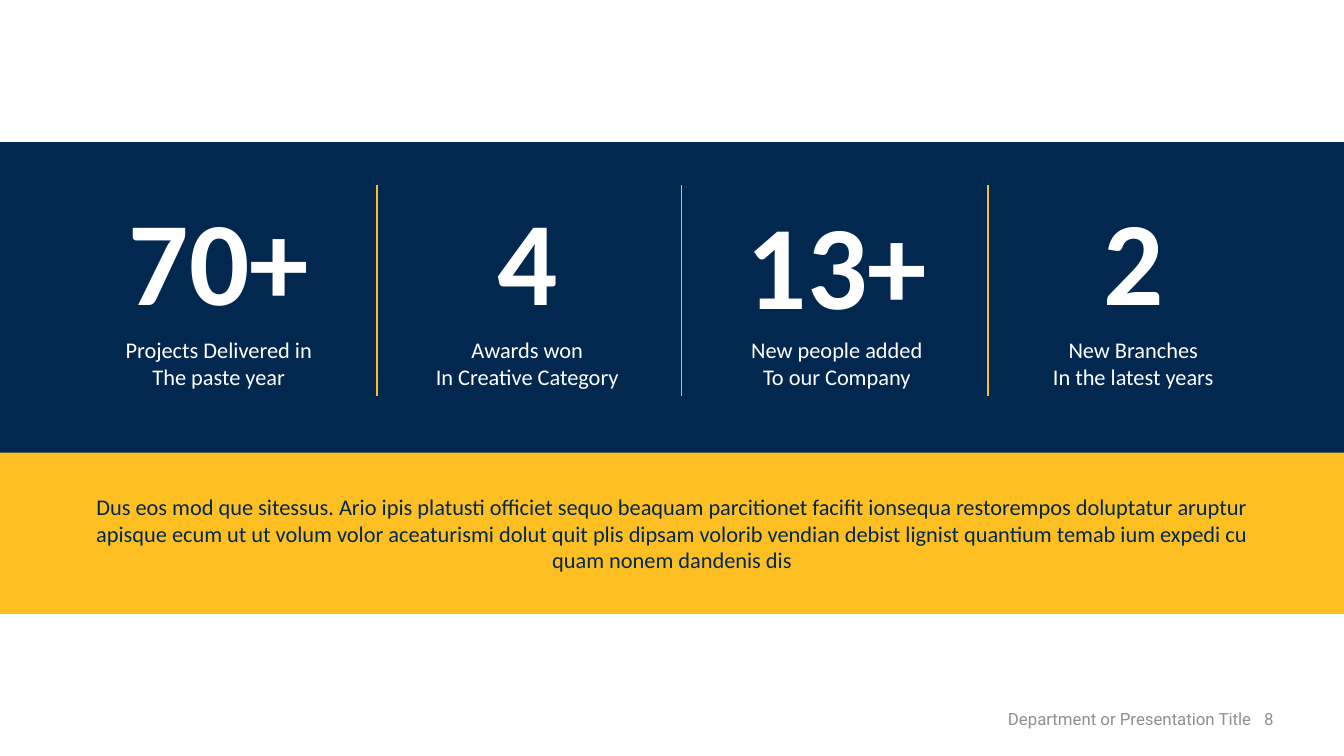
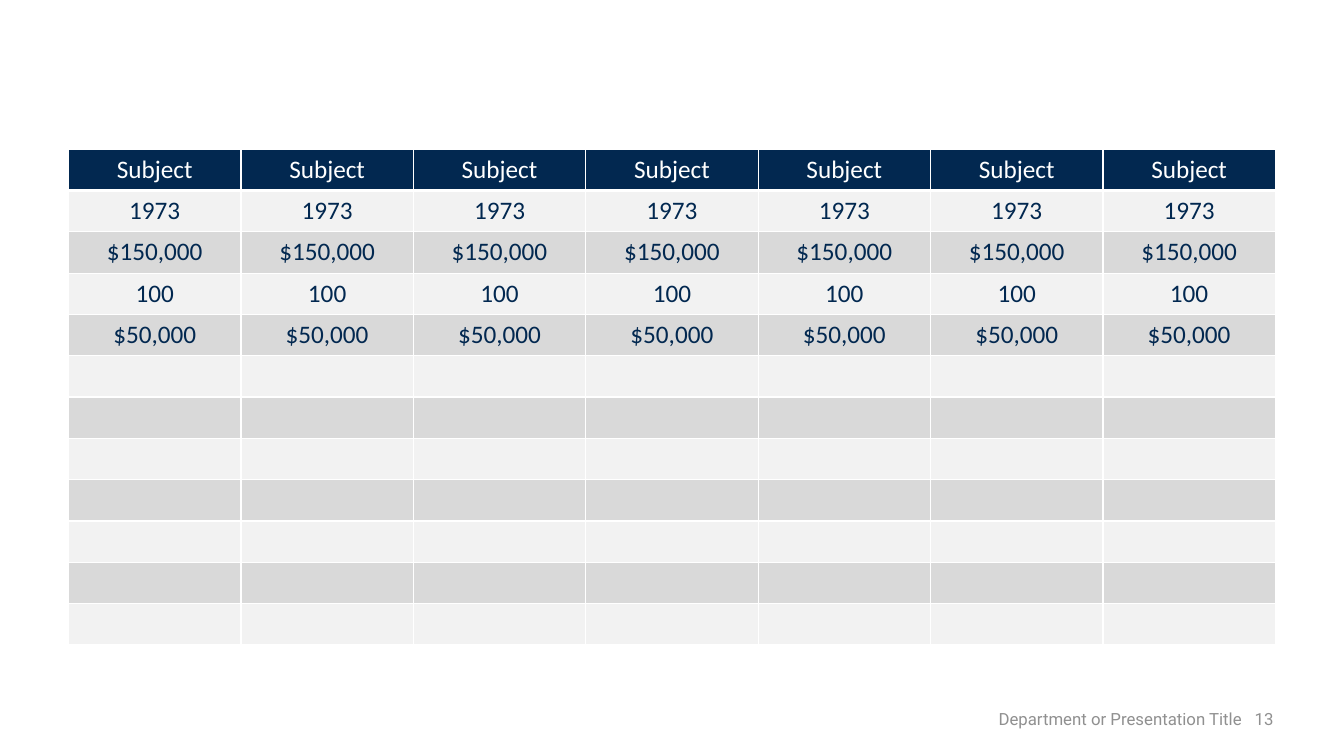
from pptx import Presentation
from pptx.dml.color import RGBColor
from pptx.enum.shapes import MSO_CONNECTOR as Connector, MSO_SHAPE as Shape
from pptx.enum.text import MSO_ANCHOR as Anchor, PP_ALIGN as Align
from pptx.oxml.ns import qn
from pptx.util import Inches, Pt
from lxml.etree import SubElement

NAVY = RGBColor(0x02, 0x28, 0x50)
GOLD = RGBColor(0xFE, 0xBF, 0x23)
WHITE = RGBColor(0xFF, 0xFF, 0xFF)
LIGHT = RGBColor(0xF2, 0xF2, 0xF2)
MEDIUM = RGBColor(0xD9, 0xD9, 0xD9)
GRAY = RGBColor(0x90, 0x90, 0x90)

WIDTH, HEIGHT = 13.33, 7.5
BODY_FONT, FOOTER_FONT = "Calibri", "Roboto"
FOOTER = "Department or Presentation Title"


def write(frame, text, size=16, color=NAVY, font=BODY_FONT, bold=False,
          align=Align.CENTER):
    """Fill a text frame, one paragraph for each line of text."""
    for index, line in enumerate(text.split("\n")):
        para = frame.paragraphs[0] if index == 0 else frame.add_paragraph()
        para.alignment = align
        para.font.size = Pt(size)
        if line:
            span = para.add_run()
            span.text = line
            style(span, size, color, font, bold)


def style(span, size, color, font, bold=False):
    span.font.size = Pt(size)
    span.font.name = font
    span.font.bold = bold
    span.font.color.rgb = color


class Builder:
    def __init__(self):
        self.deck = Presentation()
        self.deck.slide_width = Inches(WIDTH)
        self.deck.slide_height = Inches(HEIGHT)
        self.page = None

    def new_page(self, number):
        self.page = self.deck.slides.add_slide(self.deck.slide_layouts[6])
        frame = self.text_box(7.61, 6.95, 5.12, 0.33)
        frame.vertical_anchor = Anchor.BOTTOM
        para = frame.paragraphs[0]
        para.alignment = Align.RIGHT
        para.line_spacing = 0.9
        for text in (FOOTER, " ", str(number)):
            span = para.add_run()
            span.text = text
            style(span, 12, GRAY, FOOTER_FONT)
            if text == " ":  # widen the gap before the page number
                span.font._element.set("spc", "600")

    def text_box(self, left, top, width, height, side=0.1, wrap=True):
        box = self.page.shapes.add_textbox(
            Inches(left), Inches(top), Inches(width), Inches(height))
        frame = box.text_frame
        frame.word_wrap = wrap
        frame.margin_left = frame.margin_right = Inches(side)
        return frame

    def band(self, top, height, color):
        box = self.page.shapes.add_shape(
            Shape.RECTANGLE, 0, Inches(top), Inches(WIDTH), Inches(height))
        box.shadow.inherit = False
        box.fill.solid()
        box.fill.fore_color.rgb = color
        box.line.fill.background()

    def divider(self, x, top, bottom):
        line = self.page.shapes.add_connector(
            Connector.STRAIGHT, Inches(x), Inches(top), Inches(x), Inches(bottom))
        line.line.color.rgb = GOLD
        line.line.width = Pt(1)
        SubElement(line._element.spPr, qn("a:effectLst"))

    def statistic(self, center, top, figure, caption):
        width = 2.8
        left = center - width / 2
        write(self.text_box(left, top, width, 1.53, side=0.03, wrap=False),
              figure, size=85, color=WHITE, bold=True)
        write(self.text_box(left, 3.29, width, 0.64, side=0.03),
              caption, color=WHITE)

    def table(self, left, top, column_width, row_height, columns, rows):
        table = self.page.shapes.add_table(
            len(rows), columns, Inches(left), Inches(top),
            Inches(column_width * columns), Inches(row_height * len(rows))).table
        for column in table.columns:
            column.width = Inches(column_width)
        for index, text in enumerate(rows):
            table.rows[index].height = Inches(row_height)
            header = index == 0
            fill = NAVY if header else LIGHT if index % 2 else MEDIUM
            for cell in table.rows[index].cells:
                self.borders(cell, bottom=3 if header else 1)
                cell.fill.solid()
                cell.fill.fore_color.rgb = fill
                write(cell.text_frame, text, size=18,
                      color=WHITE if header else NAVY)

    def borders(self, cell, bottom):
        properties = cell._tc.get_or_add_tcPr()
        for side, points in (("L", 1), ("R", 1), ("T", 1), ("B", bottom)):
            edge = SubElement(properties, qn("a:ln" + side), w=str(Pt(points)))
            fill = SubElement(edge, qn("a:solidFill"))
            SubElement(fill, qn("a:srgbClr"), val=str(WHITE))


def statistics_page(builder):
    builder.new_page(8)
    builder.band(4.48, 1.61, GOLD)
    builder.band(1.41, 3.08, NAVY)

    # Key figures with their captions
    for center, top, figure, caption in (
            (2.17, 1.8, "70+", "Projects Delivered in\nThe paste year"),
            (5.23, 1.8, "4", "Awards won\nIn Creative Category"),
            (8.3, 1.84, "13+", "New people added\nTo our Company"),
            (11.24, 1.8, "2", "New Branches\nIn the latest years")):
        builder.statistic(center, top, figure, caption)
    for x in (3.74, 6.76, 9.8):
        builder.divider(x, 1.84, 3.93)

    # Summary in the gold band
    write(builder.text_box(0.62, 4.84, 12.09, 0.96),
          "Dus eos mod que sitessus. Ario ipis platusti officiet sequo beaquam "
          "parcitionet facifit ionsequa restorempos doluptatur aruptur apisque "
          "ecum ut ut volum volor aceaturismi dolut quit plis dipsam volorib "
          "vendian debist lignist quantium temab ium expedi cu quam nonem "
          "dandenis dis")


def table_page(builder):
    builder.new_page(13)
    rows = ["Subject", "1973", "$150,000", "100", "$50,000"] + [""] * 7
    builder.table(0.68, 1.48, 1.71, 0.41, columns=7, rows=rows)


def main():
    builder = Builder()
    statistics_page(builder)
    table_page(builder)
    builder.deck.save("out.pptx")


if __name__ == "__main__":
    main()
